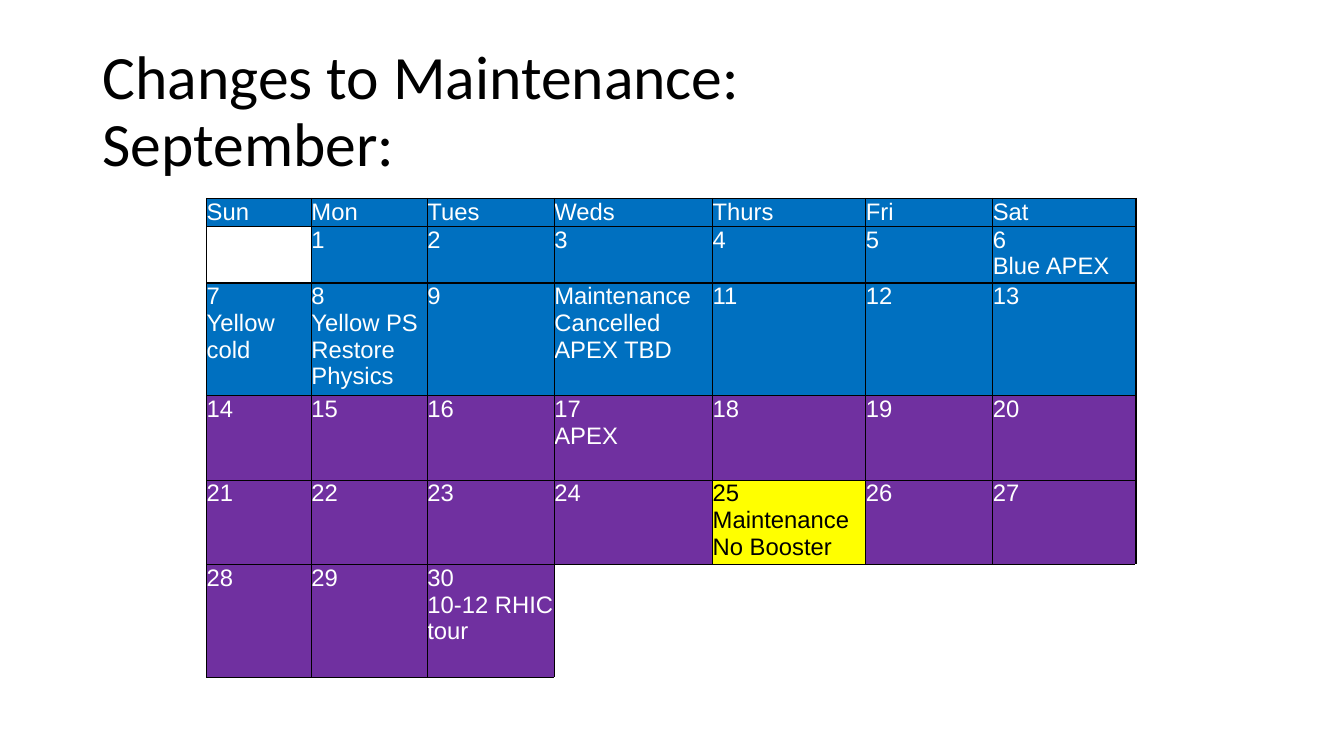
"""Build the September maintenance calendar slide."""
from lxml.etree import SubElement
from pptx import Presentation
from pptx.dml.color import RGBColor
from pptx.enum.text import MSO_ANCHOR as Anchor, MSO_AUTO_SIZE as AutoSize, PP_ALIGN as Align
from pptx.oxml.ns import qn
from pptx.util import Cm, Pt

BLUE, PURPLE, YELLOW = "0070C0", "7030A0", "FFFF00"
BLACK, WHITE = "000000", "FFFFFF"


def add_span(para, text, font, size, color):
    span = para.add_run()
    span.text = text
    span.font.name = font
    span.font.size = Pt(size)
    span.font.color.rgb = RGBColor.from_string(color)


def add_borders(cell, sides):
    for side in sides:
        line = SubElement(cell._tc.get_or_add_tcPr(), qn(f"a:ln{side}"), w=str(Pt(1)))
        fill = SubElement(line, qn("a:solidFill"))
        SubElement(fill, qn("a:srgbClr"), val=BLACK)


deck = Presentation()
deck.slide_width, deck.slide_height = Cm(33.87), Cm(19.05)
page = deck.slides.add_slide(deck.slide_layouts[5])

title = page.shapes.title
title.left, title.top, title.width, title.height = Cm(2.33), Cm(1.01), Cm(29.21), Cm(3.68)
frame = title.text_frame
frame.word_wrap = True
frame.auto_size = AutoSize.NONE
frame.vertical_anchor = Anchor.MIDDLE
para = frame.paragraphs[0]
para.alignment = Align.LEFT
para.line_spacing = 0.9
add_span(para, "Changes to Maintenance: ", "Calibri", 44, BLACK)
para.add_line_break()
add_span(para, "September:", "Calibri", 44, BLACK)

weekdays = ["Sun", "Mon", "Tues", "Weds", "Thurs", "Fri", "Sat"]
column_widths = [2.64, 2.92, 3.2, 3.99, 3.86, 3.2, 3.61]
row_heights = [0.71, 1.42, 2.84, 2.13, 2.13, 2.84]
row_colors = [BLUE] * 3 + [PURPLE] * 3
last_day = 30
maintenance_day = 25
events = {
    6: ["6", "Blue APEX"],
    7: ["7", "Yellow cold"],
    8: ["8", "Yellow PS", "Restore Physics"],
    10: ["Maintenance Cancelled", "APEX TBD"],
    17: ["17", "APEX"],
    25: ["25 Maintenance", "No Booster"],
    30: ["30", "10-12 RHIC tour"],
}

calendar = page.shapes.add_table(
    len(row_heights), len(weekdays), Cm(5.21), Cm(5.0),
    Cm(sum(column_widths)), Cm(sum(row_heights))).table
calendar.first_row = False
calendar.horz_banding = False
for column, width in zip(calendar.columns, column_widths):
    column.width = Cm(width)
for row, height in zip(calendar.rows, row_heights):
    row.height = Cm(height)
calendar.cell(5, 3).merge(calendar.cell(5, 6))

for week, row_color in enumerate(row_colors):
    for weekday, name in enumerate(weekdays):
        cell = calendar.cell(week, weekday)
        day = (week - 1) * 7 + weekday
        cell.margin_left = cell.margin_right = cell.margin_top = cell.margin_bottom = 0
        if day > last_day:
            add_borders(cell, "LT" if cell.is_merge_origin else "T")
            cell.fill.background()
            continue
        add_borders(cell, "LRTB")
        if day == 0:
            cell.fill.background()
            continue
        special = day == maintenance_day
        cell.fill.solid()
        cell.fill.fore_color.rgb = RGBColor.from_string(YELLOW if special else row_color)
        lines = [name] if week == 0 else events.get(day, [str(day)])
        for index, text in enumerate(lines):
            para = cell.text_frame.add_paragraph() if index else cell.text_frame.paragraphs[0]
            add_span(para, text, "Arial", 17, BLACK if special else WHITE)

deck.save("out.pptx")
